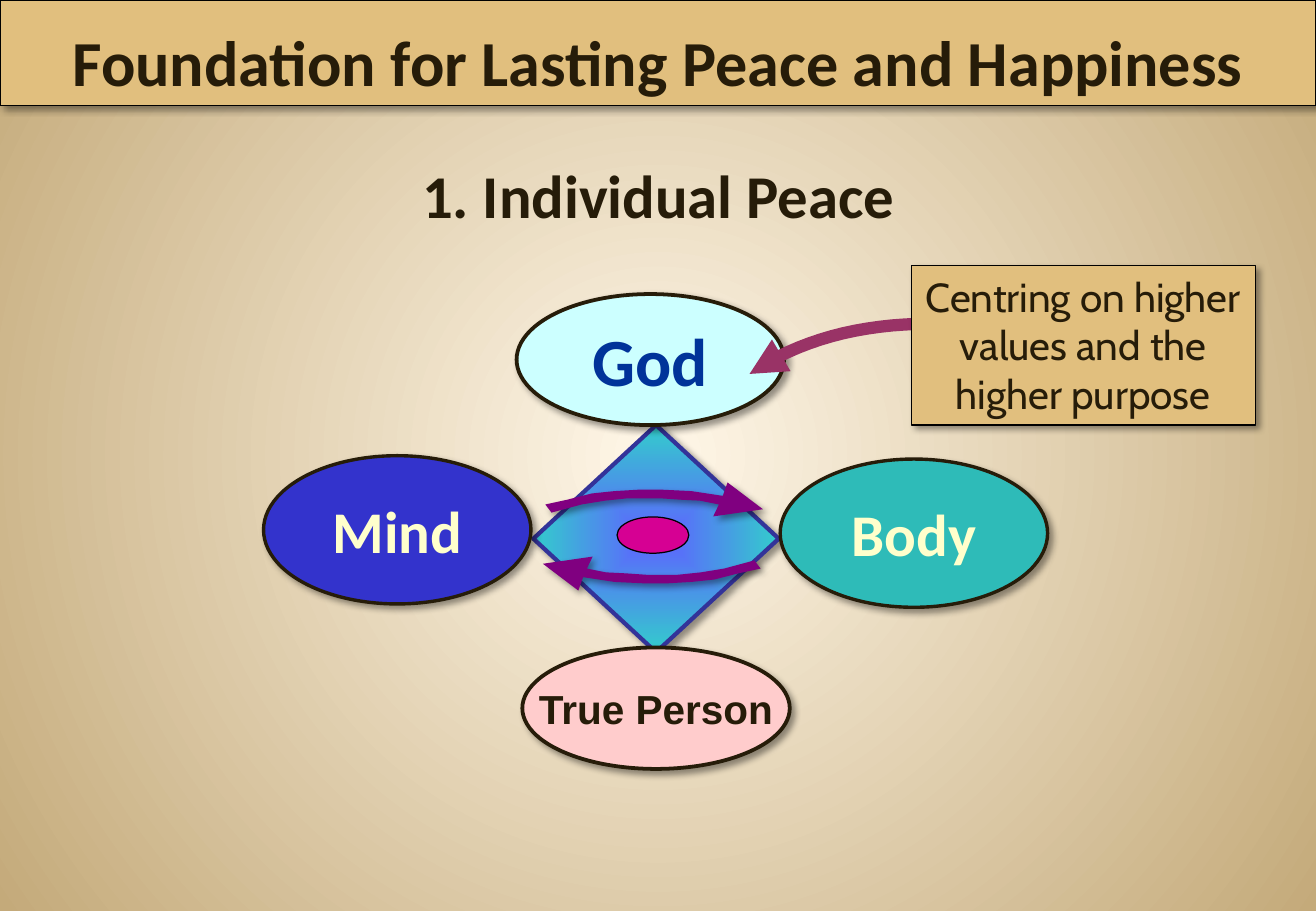
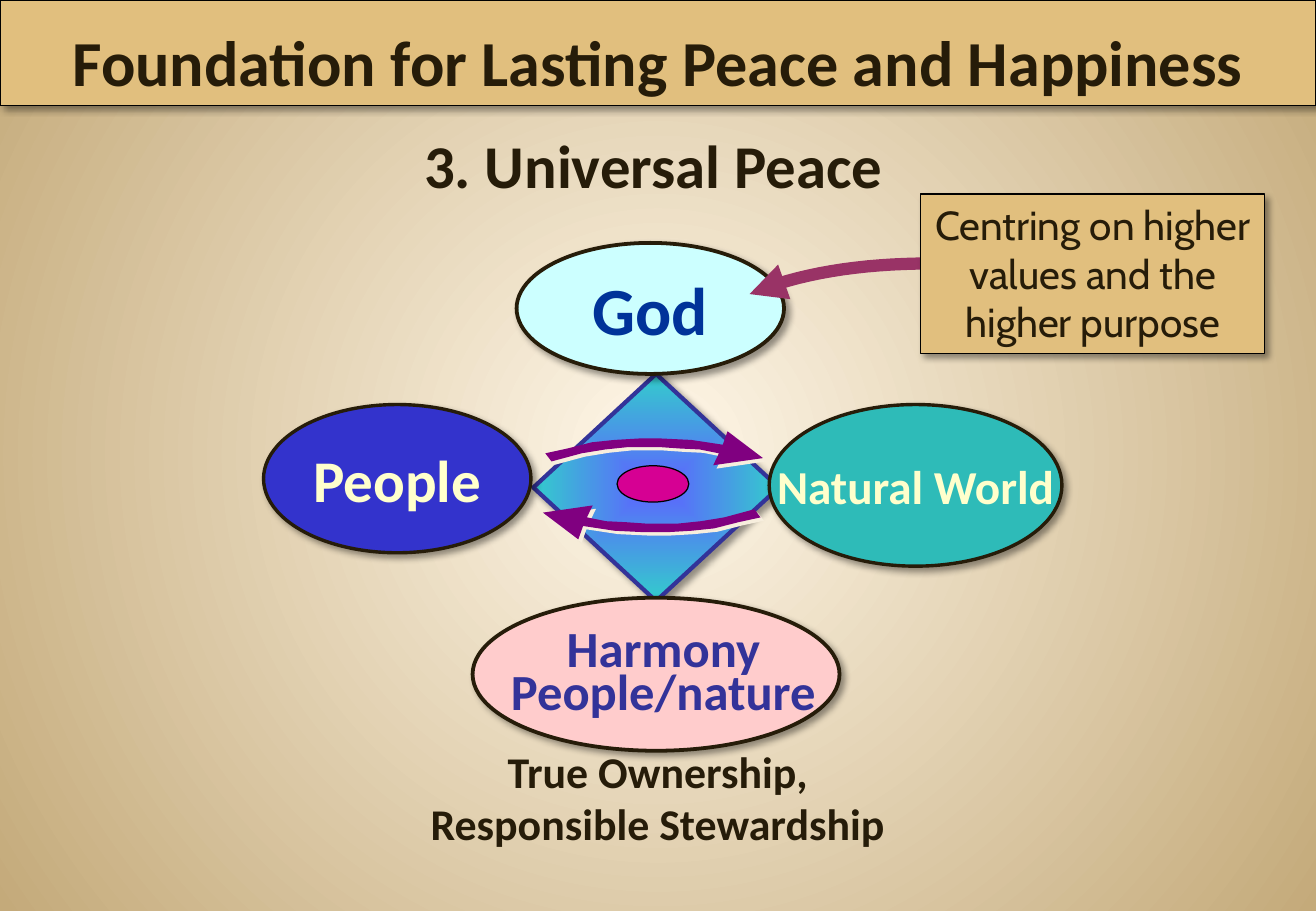
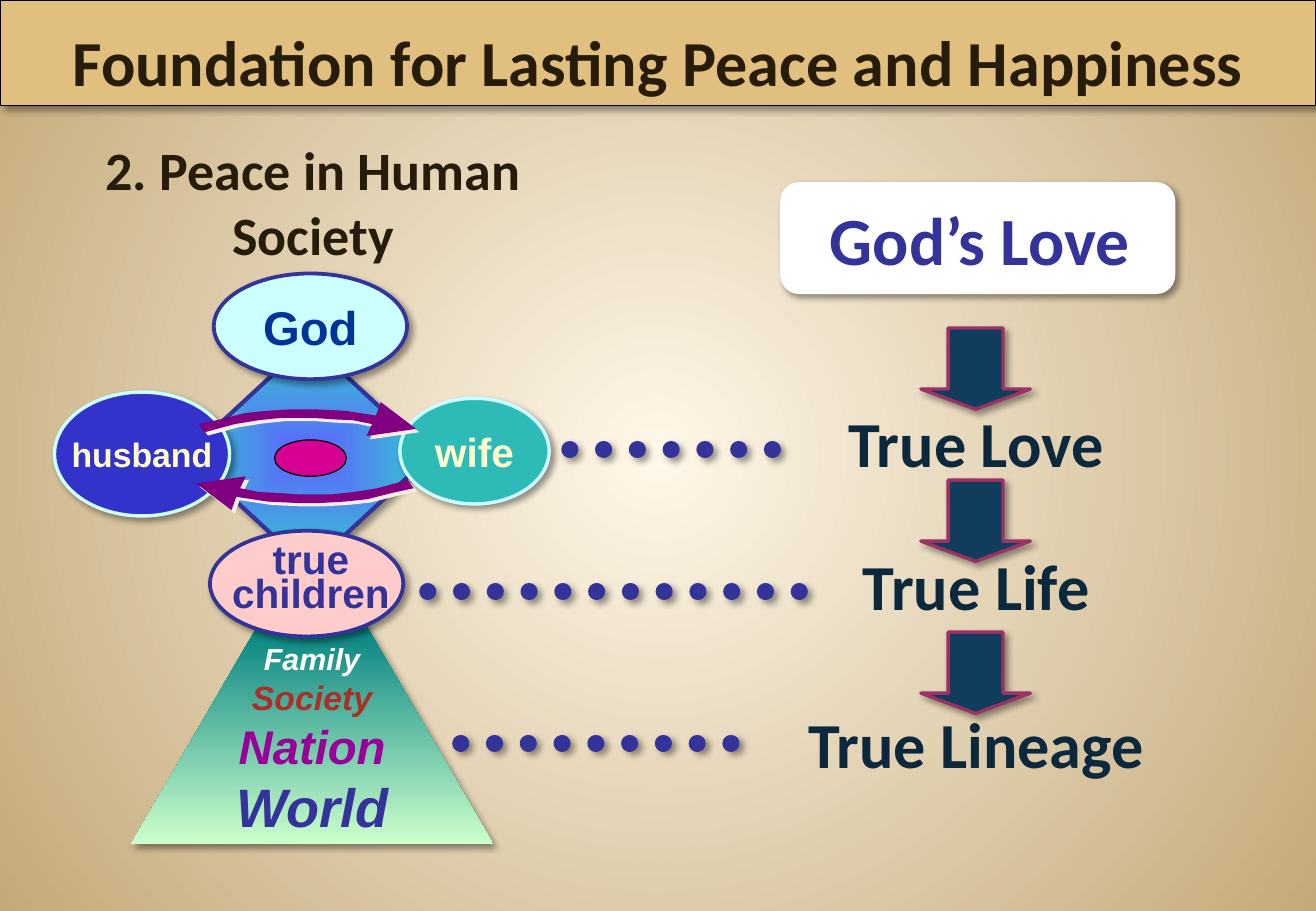
from lxml.etree import SubElement as Sub
from pptx import Presentation
from pptx.dml.color import RGBColor
from pptx.enum.dml import MSO_LINE as Dash
from pptx.enum.shapes import MSO_CONNECTOR as Link, MSO_SHAPE as Kind
from pptx.enum.text import MSO_ANCHOR as Anchor, MSO_AUTO_SIZE as Fit, PP_ALIGN as Align
from pptx.oxml.ns import qn
from pptx.util import Cm, Pt

WIDE, HIGH = 27.51, 19.05
INK, SAND, BLACK = "261C09", "E1BF7E", "000000"
NAVY, CREAM, PLUM = "333399", "FFFFCC", "993366"
BLUE, TEAL, PINK, ICE = "3333CC", "2EBBB8", "FFCCCC", "CCFFFF"
SOFT = (BLACK, 40, 4, 3)
PALE = ("F7EEDD", 100, 0, 2.8)
TITLE = "Foundation for Lasting Peace and Happiness"
CLAIM = "Centring on higher values and the higher purpose"
CURL = [
    (1.38, -0.67), (0.98, -0.75), (0.57, -0.77), (0.14, -0.8), (-0.52, -0.8),
    (-1, -0.75), (-1.49, -0.67), (-2.12, -0.5), (-2.25, -0.67), (-1.79, -0.77),
    (-1.28, -0.9), (-0.8, -0.95), (-0.29, -0.98), (0.17, -0.98), (0.8, -0.95),
    (1.46, -0.85), (1.56, -1.13), (2.3, -0.57), (1.26, -0.42),
]


def hue(code):
    return RGBColor.from_string(code)


def write(frame, text, size=36, ink=INK, font="Calibri", bold=True, tilt=False, gap=None):
    for line in text.split("\n"):
        para = frame.add_paragraph() if frame.text else frame.paragraphs[0]
        para.alignment = Align.CENTER
        if gap:
            para.line_spacing = gap
        run = para.add_run()
        run.text = line
        face = run.font
        face.size, face.name, face.bold, face.italic = Pt(size), font, bold, tilt
        face.color.rgb = hue(ink)


def blend(owner, fill, ends, form=None):
    fill.gradient()
    for stop, code in zip(fill.gradient_stops, ends):
        stop.color.rgb = hue(code)
    fill.gradient_angle = 270
    if form:
        grad = owner.element.find(".//" + qn("a:gradFill"))
        grad.remove(grad.find(qn("a:lin")))
        way = Sub(grad, qn("a:path"), path=form)
        Sub(way, qn("a:fillToRect"), l="50000", t="50000", r="50000", b="50000")


def shade(shape, cast):
    effect = Sub(shape.element.spPr, qn("a:effectLst"))
    if cast:
        code, alpha, blur, dist = cast
        drop = Sub(effect, qn("a:outerShdw"), blurRad=str(Pt(blur)), dist=str(Pt(dist)),
                   dir="2700000", algn="ctr", rotWithShape="0")
        tone = Sub(drop, qn("a:srgbClr"), val=code)
        Sub(tone, qn("a:alpha"), val=str(alpha * 1000))


def dress(shape, fill=None, line=None, weight=0.75, cast=SOFT, form=None):
    if isinstance(fill, tuple):
        blend(shape, shape.fill, fill, form)
    elif fill:
        shape.fill.solid()
        shape.fill.fore_color.rgb = hue(fill)
    else:
        shape.fill.background()
    if line:
        shape.line.color.rgb = hue(line)
        shape.line.width = Pt(weight)
    else:
        shape.line.fill.background()
    shade(shape, cast)
    return shape


class Deck:
    def __init__(self):
        self.show = Presentation()
        self.show.slide_width, self.show.slide_height = Cm(WIDE), Cm(HIGH)
        master = self.show.slide_master
        blend(master, master.background.fill, ("FFF7E8", "C4AA7A"), "circle")

    def page(self):
        self.slide = self.show.slides.add_slide(self.show.slide_layouts[5])
        self.shapes = self.slide.shapes
        band = self.shapes.title
        band.left, band.top, band.width, band.height = 0, 0, Cm(WIDE), Cm(2.21)
        dress(band, SAND, BLACK)
        frame = band.text_frame
        frame.auto_size, frame.vertical_anchor = Fit.NONE, Anchor.BOTTOM
        write(frame, TITLE, size=38)

    def shape(self, kind, spot, adjust=(), **look):
        shape = self.shapes.add_shape(kind, *map(Cm, spot))
        for at, value in enumerate(adjust):
            shape.adjustments[at] = value
        return dress(shape, **look)

    def text(self, spot, text, **style):
        frame = self.shapes.add_textbox(*map(Cm, spot)).text_frame
        frame.word_wrap = True
        write(frame, text, **style)
        return frame

    def oval(self, spot, fill, text="", line=INK, weight=2, **style):
        shape = self.shape(Kind.OVAL, spot, fill=fill, line=line, weight=weight)
        if text:
            frame = shape.text_frame
            frame.word_wrap, frame.vertical_anchor = False, Anchor.MIDDLE
            write(frame, text, **style)

    def gem(self, x, y):
        self.shape(Kind.DIAMOND, (x, y, 5.13, 4.75), fill=("5D64FF", "33CCCC"),
                   line=NAVY, weight=2.5, form="shape")

    def dot(self, x, y):
        self.shape(Kind.OVAL, (x - 0.75, y - 0.38, 1.5, 0.76), fill="D60093",
                   line=BLACK, cast=None)

    def trace(self, spots, close):
        first, *rest = [(Cm(x), Cm(y)) for x, y in spots]
        pen = self.shapes.build_freeform(*first)
        pen.add_line_segments(rest, close=close)
        return pen.convert_to_shape()

    def spin(self, x, y, cast):
        for turn in (1, -1):
            spots = [(x + turn * dx, y + turn * dy) for dx, dy in CURL]
            dress(self.trace(spots, True), "800080", cast=cast)

    def bend(self, x, y, wide, rise):
        steps = [n / 16 for n in range(17)]
        spots = [(x + wide * (0.8 * t * (1 - t) + t * t), y - rise * (1 - (1 - t) ** 2))
                 for t in steps]
        curve = dress(self.trace(spots, False), line=PLUM, weight=7.25, cast=None)
        Sub(curve.element.spPr.find(qn("a:ln")), qn("a:headEnd"), type="triangle")

    def note(self, x, y):
        box = self.shape(Kind.RECTANGLE, (x, y, 7.19, 3.33), fill=SAND, line=BLACK)
        box.text_frame.word_wrap = True
        box.text_frame.vertical_anchor = Anchor.TOP
        write(box.text_frame, CLAIM, size=24, font="Cabin", bold=False)

    def beads(self, x, end, y):
        line = self.shapes.add_connector(Link.STRAIGHT, Cm(x), Cm(y), Cm(end), Cm(y))
        line.line.color.rgb = hue(NAVY)
        line.line.width = Pt(10)
        line.line.dash_style = Dash.ROUND_DOT
        line.element.spPr.find(qn("a:ln")).set("cap", "rnd")
        shade(line, SOFT)

    def ring(self, y, left, right, base, cast):
        self.gem(11.15, y + 2.74)
        self.oval((5.51, y + 3.38, 5.59, 3.1), BLUE, left, size=35, ink=CREAM)
        spot, text, size = right
        self.oval(spot, TEAL, text, size=size, ink=CREAM)
        self.oval((10.8, y, 5.59, 2.74), ICE, "God", weight=2.25, size=40, ink="003399")
        spot, text = base
        self.oval(spot, PINK, text, weight=2.25, size=24, font="Arial")
        self.dot(13.65, y + 5.04)
        self.spin(13.65, y + 5.07, cast)


def self_peace(deck):
    deck.page()
    deck.text((8.05, 3.18, 11.43, 1.8), "1. Individual Peace")
    deck.ring(6.15, "Mind", ((16.31, 9.6, 5.59, 3.1), "Body", 35),
              ((10.92, 13.54, 5.59, 2.54), "True Person"), SOFT)
    deck.bend(15.67, 7.82, 3.81, 1.05)
    deck.note(19.05, 5.56)


def world_peace(deck):
    deck.page()
    deck.text((0, 15.44, WIDE, 2.49), "True Ownership,\nResponsible Stewardship", size=26)
    deck.text((5.72, 2.54, 15.88, 1.8), "3. Universal Peace")
    deck.ring(5.08, "People", ((16.08, 8.46, 6.12, 3.38), "Natural World", 28),
              ((9.88, 12.5, 7.67, 3.2), ""), PALE)
    deck.text((10.16, 13.13, 7.42, 2.06), "Harmony\nPeople/nature", size=30, ink=NAVY, gap=0.7)
    deck.bend(15.67, 6.15, 3.81, 0.64)
    deck.note(19.25, 4.06)


def human_peace(deck):
    deck.page()
    deck.shape(Kind.ROUNDED_RECTANGLE, (16.31, 3.81, 8.26, 2.34), (0.17,), fill="FFFFFF")
    deck.shape(Kind.TRAPEZOID, (2.74, 13, 7.57, 4.65), (0.58,), fill=("008080", "CCFFCC"))
    tower = {"font": "Arial", "tilt": True}
    frame = deck.text((4.11, 13.26, 4.83, 4.39), "Family", size=18, ink="FFFFFF", **tower)
    for text, size, ink in (("Society", 20, "AD2E27"), ("Nation", 28, "990099"),
                            ("World", 32, NAVY)):
        write(frame, text, size=size, ink=ink, **tower)
    deck.text((0.2, 2.74, 12.7, 2.97), "2. Peace in Human Society", size=32)
    for text, y in (("True Love", 8.31), ("True Life", 11.3), ("True Lineage", 14.6)):
        deck.text((14.45, y, 11.91, 1.88), text, size=38, ink="0C283D")
    for x, end, y in ((11.91, 16.51, 9.4), (8.94, 16.97, 12.37), (9.63, 15.6, 15.54)):
        deck.beads(x, end, y)
    for step in range(3):
        deck.shape(Kind.DOWN_ARROW, (19.25, 6.86 + 3.18 * step, 2.29, 1.7), (0.5, 0.25),
                   fill="113D5C", line=PLUM, weight=2)
    deck.text((14.53, 4.01, 11.91, 1.96), "God’s Love", size=40, ink=NAVY)
    deck.gem(3.89, 7.14)
    mate = {"line": ICE, "font": "Arial", "ink": CREAM}
    deck.oval((1.14, 8.2, 3.66, 2.59), BLUE, "husband", size=20, **mate)
    deck.oval((8.36, 8.33, 3.12, 2.21), TEAL, "wife", size=24, **mate)
    deck.oval((4.47, 5.72, 4.04, 2.21), ICE, "God", line=NAVY, weight=2.25,
              size=28, font="Arial", ink="003399")
    deck.oval((4.39, 11.1, 4.04, 2.21), PINK, line=NAVY, weight=2.25)
    deck.text((3.86, 11.33, 5.28, 1.7), "true\nchildren", size=24, ink=NAVY,
              font="Arial", gap=0.7)
    deck.dot(6.49, 9.58)
    deck.spin(6.4, 9.54, PALE)


def main():
    deck = Deck()
    self_peace(deck)
    world_peace(deck)
    human_peace(deck)
    deck.show.save("out.pptx")


if __name__ == "__main__":
    main()
